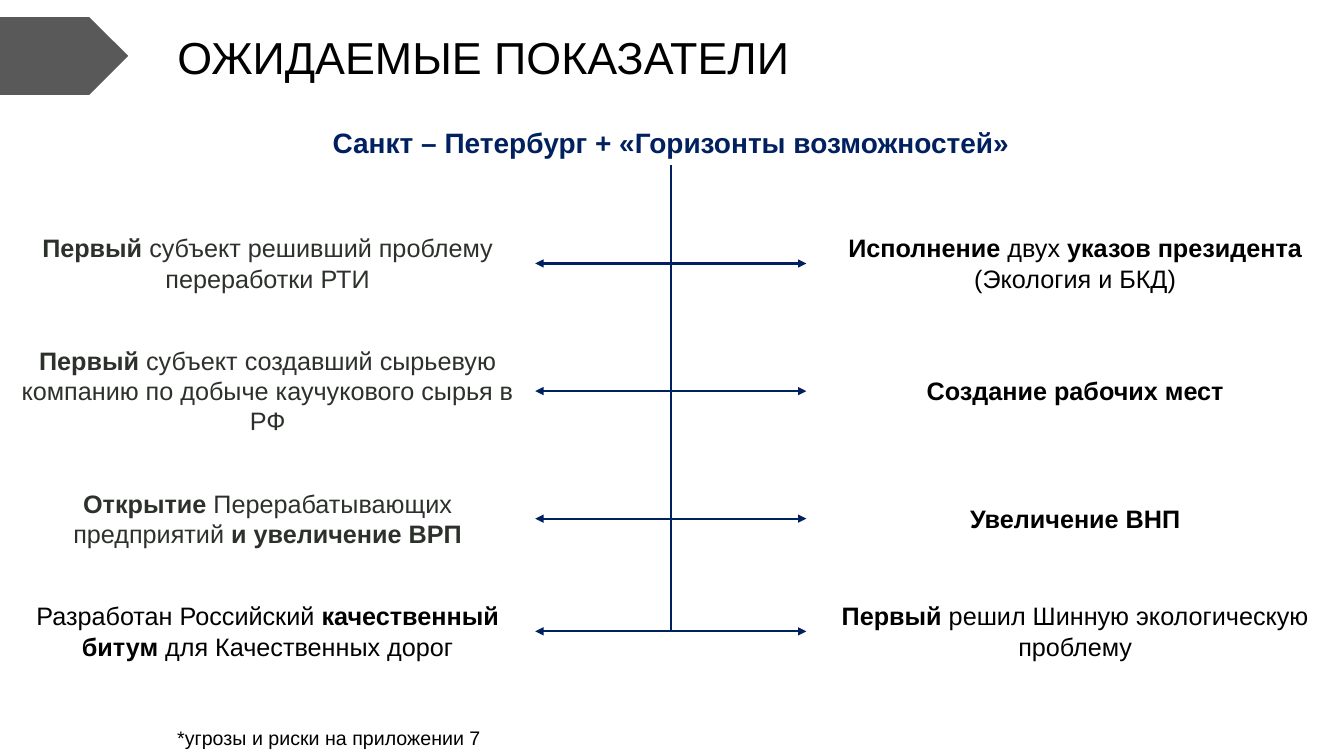
from pptx import Presentation
from pptx.dml.color import RGBColor
from pptx.enum.shapes import MSO_CONNECTOR, MSO_SHAPE
from pptx.enum.text import MSO_ANCHOR, MSO_AUTO_SIZE, PP_ALIGN
from pptx.oxml.ns import qn
from pptx.util import Pt

LEFT, CENTER = PP_ALIGN.LEFT, PP_ALIGN.CENTER
TOP = MSO_ANCHOR.TOP
NO_FIT, GROW = MSO_AUTO_SIZE.NONE, MSO_AUTO_SIZE.SHAPE_TO_FIT_TEXT
ELBOW, PENTAGON = MSO_CONNECTOR.ELBOW, MSO_SHAPE.PENTAGON

FONT = "Arial"
BLACK, CHARCOAL, GREY, NAVY = "000000", "2D312C", "595959", "002060"

TRUNK_X, TRUNK_TOP = 479.3, 118.1
LEFT_EDGE, RIGHT_EDGE = 382.3, 576
SLIDE_WIDTH = 960

# Row centre, then for each side: line count, colour, (text, bold) runs
INDICATORS = [
    (188.2,
     (2, CHARCOAL, [("Первый ", True),
                    ("субъект решивший проблему переработки РТИ", False)]),
     (2, BLACK, [("Исполнение ", True), ("двух ", False),
                 ("указов президента", True), (" (Экология и БКД)", False)])),
    (279.4,
     (3, CHARCOAL, [("Первый ", True),
                    ("субъект создавший сырьевую компанию по добыче "
                     "каучукового сырья в РФ", False)]),
     (1, BLACK, [("Создание рабочих мест", True)])),
    (370.5,
     (2, CHARCOAL, [("Открытие", True),
                    (" Перерабатывающих предприятий ", False),
                    ("и увеличение ВРП", True)]),
     (1, BLACK, [("Увеличение ВНП", True)])),
    (451,
     (2, BLACK, [("Разработан Российский", False),
                 (" качественный битум ", True),
                 ("для Качественных дорог", False)]),
     (2, BLACK, [("Первый ", True),
                 ("решил Шинную экологическую проблему", False)])),
]


def rgb(value):
    return RGBColor.from_string(value)


def write_runs(frame, runs, size, color, align):
    paragraph = frame.paragraphs[0]
    paragraph.alignment = align
    for text, bold in runs:
        run = paragraph.add_run()
        run.text = text
        run.font.name = FONT
        run.font.size = Pt(size)
        run.font.bold = bold
        run.font.color.rgb = rgb(color)


def add_title(slide, text, left, top, width, height):
    title = slide.shapes.title
    title.left, title.top = Pt(left), Pt(top)
    title.width, title.height = Pt(width), Pt(height)
    frame = title.text_frame
    frame.vertical_anchor = TOP
    frame.auto_size = NO_FIT
    write_runs(frame, [(text, False)], 32, BLACK, LEFT)


def add_text(slide, box, runs, size, color, align=CENTER, wrap=True):
    frame = slide.shapes.add_textbox(*map(Pt, box)).text_frame
    frame.word_wrap = wrap
    frame.auto_size = GROW
    write_runs(frame, runs, size, color, align)


def add_marker(slide):
    marker = slide.shapes.add_shape(PENTAGON, Pt(0), Pt(12.2), Pt(91.6), Pt(55.6))
    marker.shadow.inherit = False
    marker.fill.solid()
    marker.fill.fore_color.rgb = rgb(GREY)
    marker.line.fill.background()


def add_branch(slide, end_x, end_y):
    """Elbow arrow that drops down the trunk and turns towards end_x."""
    drop, reach = end_y - TRUNK_TOP, abs(end_x - TRUNK_X)
    # The elbow is drawn lying down and turned about its centre
    left = (TRUNK_X + end_x - drop) / 2
    top = (TRUNK_TOP + end_y - reach) / 2
    branch = slide.shapes.add_connector(
        ELBOW, Pt(left), Pt(top), Pt(left + drop), Pt(top + reach))
    branch.line.color.rgb = rgb(NAVY)
    branch.line.width = Pt(1.5)

    properties = branch._element.spPr
    properties.find(qn("a:prstGeom")).set("prst", "bentConnector2")
    turn = properties.find(qn("a:xfrm"))
    if end_x < TRUNK_X:
        turn.set("rot", str(90 * 60000))
    else:
        turn.set("rot", str(270 * 60000))
        turn.set("flipH", "1")
    line = properties.find(qn("a:ln"))
    arrowhead = line.makeelement(qn("a:tailEnd"), {"type": "triangle"})
    line.append(arrowhead)
    properties.append(properties.makeelement(qn("a:effectLst"), {}))


def add_indicator(slide, left, width, center, indicator):
    lines, color, runs = indicator
    height = 7.4 + 21.8 * lines
    add_text(slide, (left, center - height / 2, width, height), runs, 18, color)


def main():
    deck = Presentation()
    deck.slide_width, deck.slide_height = Pt(SLIDE_WIDTH), Pt(540)
    slide = deck.slides.add_slide(deck.slide_layouts[5])

    # Header
    add_marker(slide)
    add_title(slide, "ОЖИДАЕМЫЕ ПОКАЗАТЕЛИ", 119.5, 17.3, 798.5, 46)
    add_text(slide, (228.3, 86.4, 502, 31.7),
             [("Санкт – Петербург + «Горизонты возможностей»", True)],
             20, NAVY, wrap=False)

    # Indicators on both sides of the trunk
    for center, left_side, right_side in INDICATORS:
        add_indicator(slide, 0, LEFT_EDGE, center, left_side)
        add_indicator(slide, RIGHT_EDGE, SLIDE_WIDTH - RIGHT_EDGE, center, right_side)
        for end_x in (LEFT_EDGE, RIGHT_EDGE):
            add_branch(slide, end_x, center)

    # Footnote
    add_text(slide, (119.5, 514.8, 798.5, 24.5),
             [("*угрозы и риски на приложении 7", False)], 14, BLACK, LEFT)

    deck.save("out.pptx")


if __name__ == "__main__":
    main()
